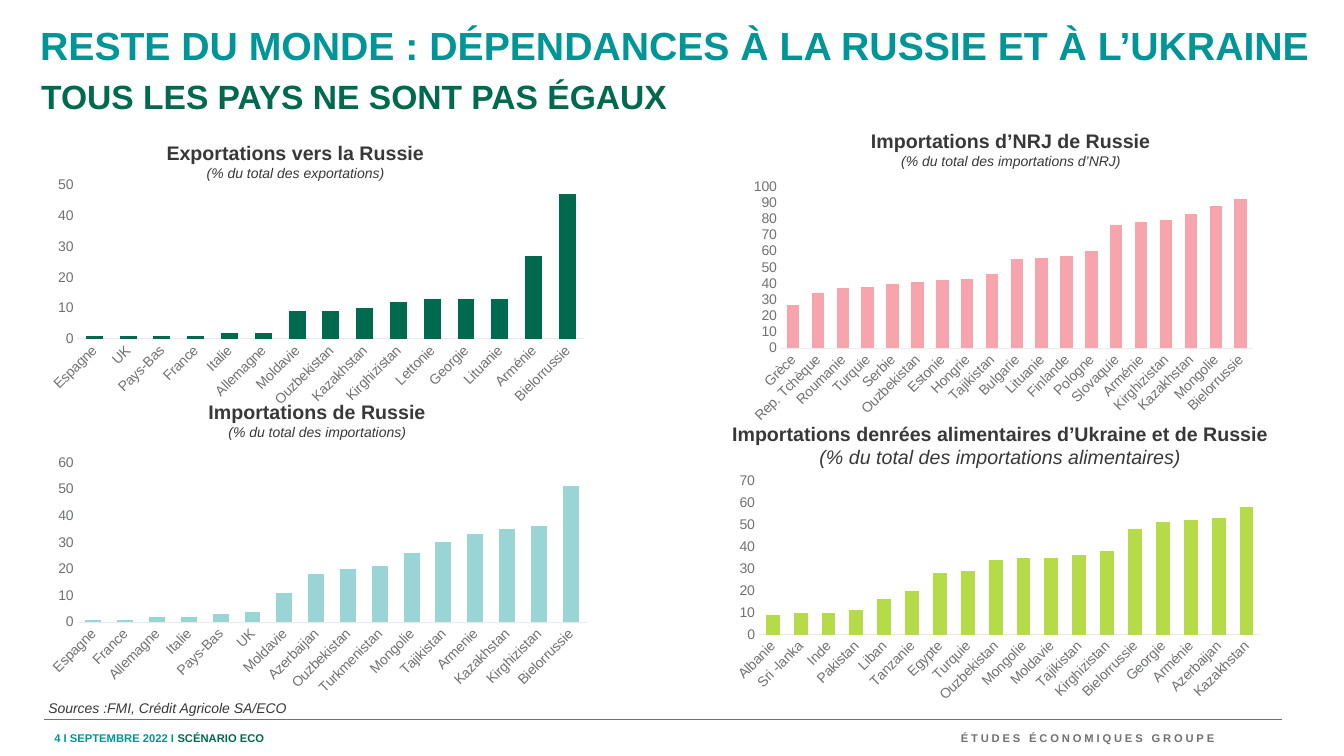
"""Build the slide on dependence on Russia and Ukraine, with four column charts."""
from lxml import etree
from pptx import Presentation
from pptx import util as u
from pptx.chart import data
from pptx.dml import color
from pptx.enum import chart as charts, shapes, text
from pptx.oxml import ns

TEAL, GREEN, DARK, GREY, PALE = "009597", "006A4E", "38383A", "707173", "E9EAEA"
LEFT, CENTER, RIGHT = text.PP_ALIGN.LEFT, text.PP_ALIGN.CENTER, text.PP_ALIGN.RIGHT
TOP, MIDDLE = text.MSO_ANCHOR.TOP, text.MSO_ANCHOR.MIDDLE


def rgb(value):
    return color.RGBColor.from_string(value)


def points(*values):
    return [u.Pt(value) for value in values]


def apply(target, formats):
    for name, value in formats.items():
        setattr(target, name, value)


class Page:
    """Hold the shared style and the current slide."""

    font = "Arial"

    def __init__(self, deck):
        self.shapes = deck.slides.add_slide(deck.slide_layouts[6]).shapes

    def style(self, font, size, ink, **formats):
        apply(font, {"name": self.font, "size": u.Pt(size), **formats})
        font.color.rgb = rgb(ink)

    def text(self, place, paras, align=LEFT, anchor=MIDDLE, spacing=0):
        box = self.shapes.add_textbox(*points(*place))
        frame = box.text_frame
        apply(frame, {"word_wrap": True, "vertical_anchor": anchor})
        for number, spans in enumerate(paras):
            para = frame.paragraphs[0] if number == 0 else frame.add_paragraph()
            para.alignment = align
            for words, size, ink, formats in spans:
                span = para.add_run()
                span.text = words
                self.style(span.font, size, ink, **formats)
                if spacing:
                    span.font._element.set("spc", str(spacing * 100))

    def heading(self, left, middle, width, title, note, note_size):
        self.text((left, middle - 18, width, 36),
                  [[(title, 14, DARK, {"bold": True})],
                   [(note, note_size, DARK, {"italic": True})]], CENTER)

    def rule(self, left, top, right):
        line = self.shapes.add_connector(shapes.MSO_CONNECTOR.STRAIGHT,
                                         *points(left, top, right, top))
        line.line.color.rgb = rgb(GREY)
        line.line.width = u.Pt(0.5)
        etree.SubElement(line._element.spPr, ns.qn("a:effectLst"))

    def columns(self, place, plot_area, fill, top, values):
        table = data.CategoryChartData(number_format="0")
        table.categories = list(values)
        table.add_series("Series 1", list(values.values()))
        chart = self.shapes.add_chart(charts.XL_CHART_TYPE.COLUMN_CLUSTERED,
                                      *points(*place), table).chart
        apply(chart, {"has_legend": False, "has_title": False})
        self.style(chart.font, 10, GREY)
        plot = chart.plots[0]
        apply(plot, {"gap_width": 100, "overlap": -27, "vary_by_categories": False})
        bars = plot.series[0].format.fill
        bars.solid()
        bars.fore_color.rgb = rgb(fill)
        for axis in (chart.category_axis, chart.value_axis):
            apply(axis, {"has_major_gridlines": False,
                         "major_tick_mark": charts.XL_TICK_MARK.NONE,
                         "minor_tick_mark": charts.XL_TICK_MARK.NONE})
            self.style(axis.tick_labels.font, 10, GREY)
        base = chart.category_axis.format.line
        base.color.rgb = rgb(PALE)
        base.width = u.Pt(0.75)
        labels = chart.category_axis._element.find(ns.qn("c:txPr"))
        labels.find(ns.qn("a:bodyPr")).set("rot", "-2700000")
        apply(chart.value_axis, {"minimum_scale": 0, "maximum_scale": top, "major_unit": 10})
        apply(chart.value_axis.tick_labels, {"number_format": "0",
                                             "number_format_is_linked": False})
        chart.value_axis.format.line.fill.background()
        self.place_plot(chart, plot_area)

    def place_plot(self, chart, plot_area):
        area = chart._chartSpace.find(".//" + ns.qn("c:plotArea"))
        for old in area.findall(ns.qn("c:layout")):
            area.remove(old)
        layout = etree.Element(ns.qn("c:layout"))
        manual = etree.SubElement(layout, ns.qn("c:manualLayout"))
        settings = [("layoutTarget", "inner"), ("xMode", "edge"), ("yMode", "edge")]
        for name, value in settings + list(zip("xywh", plot_area)):
            etree.SubElement(manual, ns.qn("c:" + name)).set("val", str(value))
        area.insert(0, layout)


EXPORTS = {
    "Espagne": 1, "UK": 1, "Pays-Bas": 1, "France": 1, "Italie": 2, "Allemagne": 2,
    "Moldavie": 9, "Ouzbekistan": 9, "Kazakhstan": 10, "Kirghizistan": 12,
    "Lettonie": 13, "Georgie": 13, "Lituanie": 13, "Arménie": 27, "Bielorrussie": 47}
IMPORTS = {
    "Espagne": 1, "France": 1, "Allemagne": 2, "Italie": 2, "Pays-Bas": 3, "UK": 4,
    "Moldavie": 11, "Azerbaijan": 18, "Ouzbekistan": 20, "Turkmenistan": 21,
    "Mongolie": 26, "Tajikistan": 30, "Armenie": 33, "Kazakhstan": 35,
    "Kirghizistan": 36, "Bielorrussie": 51}
ENERGY = {
    "Grèce": 27, "Rep. Tchèque": 34, "Roumanie": 37, "Turquie": 38, "Serbie": 40,
    "Ouzbekistan": 41, "Estonie": 42, "Hongrie": 43, "Tajikistan": 46, "Bulgarie": 55,
    "Lituanie": 56, "Finlande": 57, "Pologne": 60, "Slovaquie": 76, "Arménie": 78,
    "Kirghizistan": 79, "Kazakhstan": 83, "Mongolie": 88, "Bielorrussie": 92}
FOOD = {
    "Albanie": 9, "Sri -lanka": 10, "Inde": 10, "Pakistan": 11, "Liban": 16,
    "Tanzanie": 20, "Egypte": 28, "Turquie": 29, "Ouzbekistan": 34, "Mongolie": 35,
    "Moldavie": 35, "Tajikistan": 36, "Kirghizistan": 38, "Bielorrussie": 48,
    "Georgie": 51, "Arménie": 52, "Azerbaijan": 53, "Kazakhstan": 58}

HEADINGS = [
    (22, 115, 378, "Exportations vers la Russie", "(% du total des exportations)", 10),
    (533, 106.5, 378, "Importations d’NRJ de Russie", "(% du total des importations d’NRJ)", 10),
    (37.5, 300, 378, "Importations de Russie", "(% du total des importations)", 10),
    (489, 318, 451, "Importations denrées alimentaires d’Ukraine et de Russie",
     "(% du total des importations alimentaires)", 14)]

CHARTS = [
    ((27.4, 123.8, 398, 171.4), (0.07, 0.05, 0.91, 0.64), GREEN, 50, EXPORTS),
    ((22.3, 324.7, 413.3, 181.4), (0.08, 0.03, 0.88, 0.63), "99D5D5", 60, IMPORTS),
    ((518.4, 123.8, 392.4, 189.4), (0.1, 0.05, 0.86, 0.61), "F8A4AC", 100, ENERGY),
    ((518.4, 337.7, 393.8, 175), (0.06, 0.03, 0.91, 0.63), "B5DB48", 70, FOOD)]


def main():
    deck = Presentation()
    apply(deck, {"slide_width": u.Pt(960), "slide_height": u.Pt(540)})
    page = Page(deck)
    bold = {"bold": True}
    page.text((514.8, 514.8, 360, 24.5), [[("ÉTUDES ÉCONOMIQUES GROUPE", 8, GREY, bold)]] * 1,
              RIGHT, spacing=2)
    page.rule(31.7, 514, 915.8)
    page.text((31.7, 517, 402.5, 20), [[("4 Ι SEPTEMBRE 2022 Ι ", 8, TEAL, bold),
                                        ("SCÉNARIO ECO", 8, GREEN, bold)]])
    page.text((21.6, 13.7, 931, 36),
              [[("RESTE DU MONDE : DÉPENDANCES À LA RUSSIE ET À L’UKRAINE", 28, TEAL, bold)]])
    page.text((22.3, 51, 917, 40), [[("TOUS LES PAYS NE SONT PAS ÉGAUX", 24, GREEN, bold)]],
              anchor=TOP)
    for heading in HEADINGS:
        page.heading(*heading)
    for chart in CHARTS:
        page.columns(*chart)
    page.text((27.4, 498.2, 283, 14.4),
              [[("Sources :FMI, Crédit Agricole SA/ECO", 10, DARK, {"italic": True})]])
    deck.save("out.pptx")


if __name__ == "__main__":
    main()
